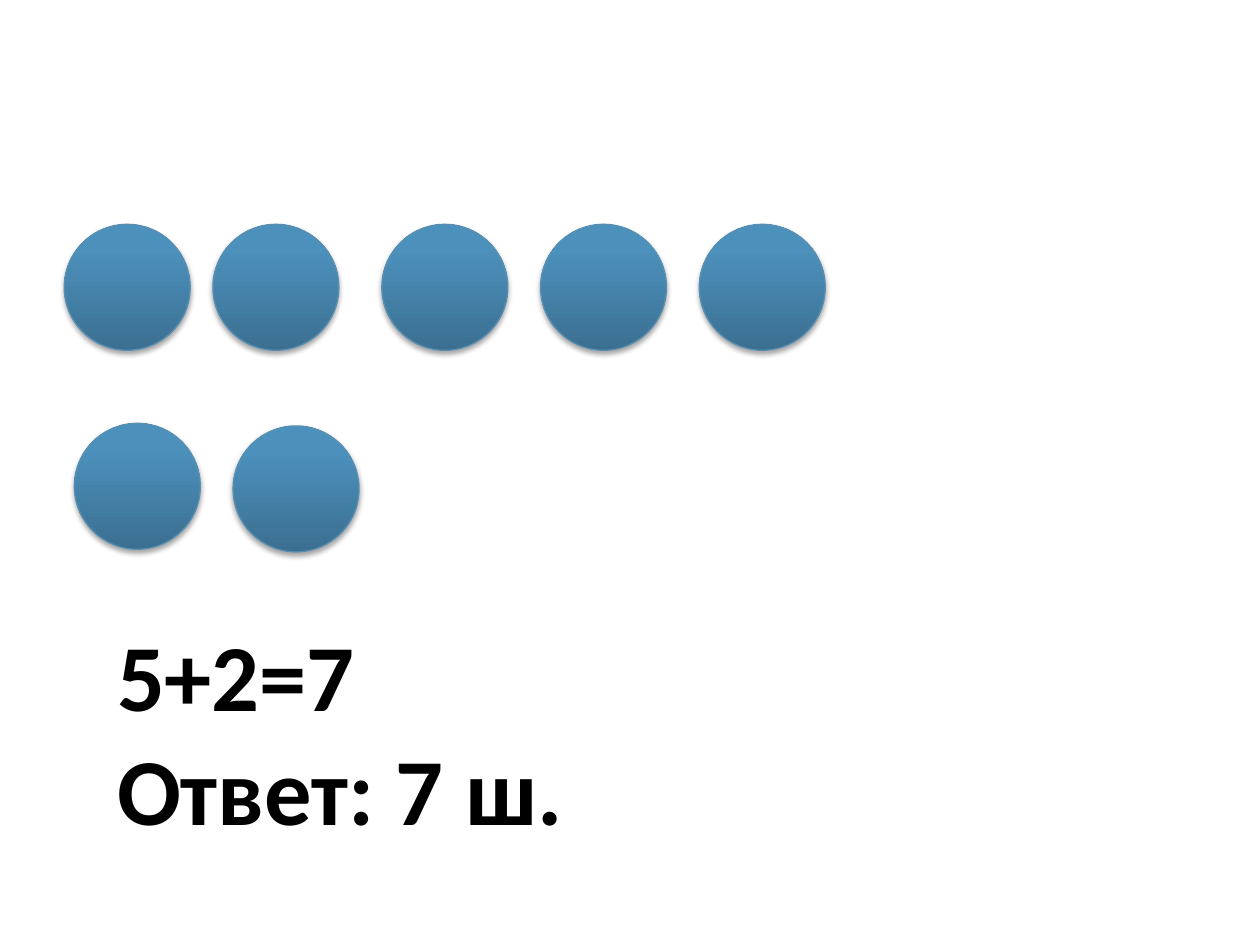
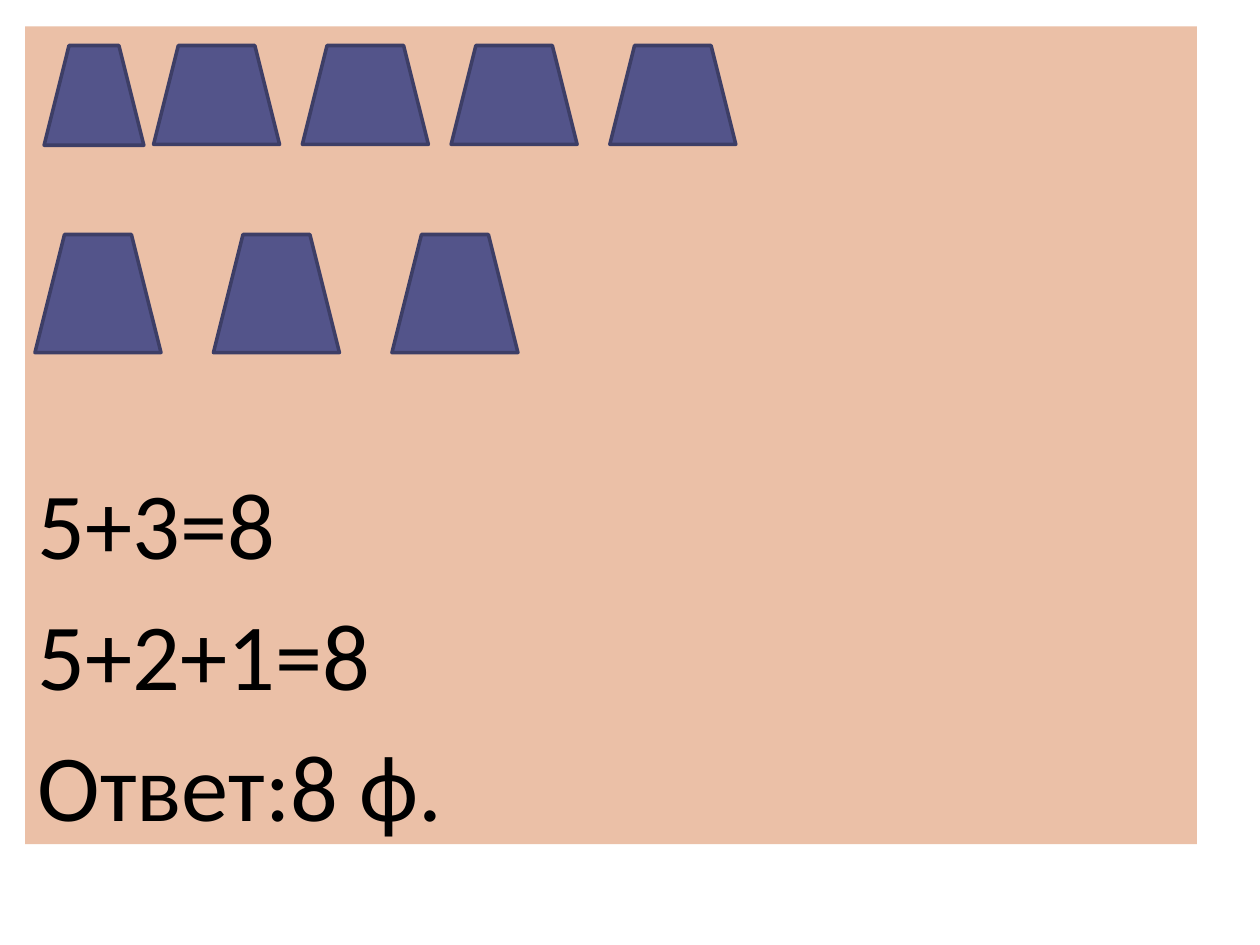
from copy import deepcopy

from lxml.etree import SubElement
from pptx import Presentation
from pptx.dml.color import RGBColor
from pptx.enum.shapes import MSO_SHAPE
from pptx.enum.text import MSO_ANCHOR
from pptx.oxml.ns import qn
from pptx.util import Pt

BLACK = RGBColor(0x00, 0x00, 0x00)
PEACH = RGBColor(0xEB, 0xC0, 0xA7)
VIOLET = RGBColor(0x53, 0x54, 0x8A)
INDIGO = RGBColor(0x3D, 0x3E, 0x66)
RIM = RGBColor(0x58, 0x8F, 0xB3)
BLUES = (
    (0, RGBColor(0x3B, 0x6F, 0x91)),
    (0.8, RGBColor(0x4C, 0x90, 0xBC)),
    (1, RGBColor(0x4A, 0x91, 0xBF)),
)


class Deck:
    font = "Calibri"
    size = 54

    def __init__(self):
        self.prs = Presentation()
        self.prs.slide_width = Pt(720)
        self.prs.slide_height = Pt(540)
        self.slide = None

    def page(self):
        self.slide = self.prs.slides.add_slide(self.prs.slide_layouts[6])

    def shape(self, kind, box, fill=None, line=None, width=0):
        item = self.slide.shapes.add_shape(kind, *map(Pt, box))
        item.shadow.inherit = False
        if fill is not None:
            item.fill.solid()
            item.fill.fore_color.rgb = fill
        if line is None:
            item.line.fill.background()
        else:
            item.line.color.rgb = line
            item.line.width = Pt(width)
        return item

    def ball(self, left, top):
        item = self.shape(MSO_SHAPE.OVAL, (left, top, 72, 72), line=RIM, width=0.75)
        self.shade(item)
        self.shadow(item)

    def shade(self, item):
        item.fill.gradient()
        item.fill.gradient_angle = 90
        stops = item.element.spPr.find(".//" + qn("a:gsLst"))
        stops.append(deepcopy(stops[0]))
        for stop, (place, color) in zip(item.fill.gradient_stops, BLUES):
            stop.position = place
            stop.color.rgb = color

    def shadow(self, item):
        effects = item.element.spPr.find(qn("a:effectLst"))
        outer = SubElement(
            effects, qn("a:outerShdw"), blurRad=str(Pt(3.1)),
            dist=str(Pt(1.8)), dir="5400000", rotWithShape="0")
        color = SubElement(outer, qn("a:srgbClr"), val=str(BLACK))
        SubElement(color, qn("a:alpha"), val="35000")

    def bucket(self, *box):
        self.shape(MSO_SHAPE.TRAPEZOID, box, VIOLET, INDIGO, 2)

    def text(self, box, lines, bold=False, gap=0):
        frame = self.slide.shapes.add_textbox(*map(Pt, box)).text_frame
        frame.word_wrap = True
        frame.vertical_anchor = MSO_ANCHOR.TOP
        for count, line in enumerate(lines):
            para = frame.add_paragraph() if count else frame.paragraphs[0]
            para.space_before = Pt(gap if count else 0)
            run = para.add_run()
            run.text = line
            run.font.name = self.font
            run.font.size = Pt(self.size)
            run.font.bold = bold
            run.font.color.rgb = BLACK


def balls(deck):
    deck.page()
    for left in (36.7, 121.7, 218.2, 308.9, 399.6):
        deck.ball(left, 128.2)
    deck.ball(42.5, 241.9)
    deck.ball(133.2, 243.4)
    deck.text((59.8, 349.2, 516, 138), ("5+2=7", "Ответ: 7 ш."), bold=True)


def buckets(deck):
    deck.page()
    deck.shape(MSO_SHAPE.RECTANGLE, (14.4, 15.1, 669.6, 467.3), PEACH)
    deck.bucket(25.2, 26, 57, 57)
    for left in (87.8, 172.8, 257.8, 348.5):
        deck.bucket(left, 26, 72, 56.5)
    for step in range(3):
        deck.bucket(20 + 102 * step, 134, 72, 67.5)
    deck.text((14.4, 262, 669.6, 226), ("5+3=8", "5+2+1=8", "Ответ:8 ф."), gap=10)


def main():
    deck = Deck()
    balls(deck)
    buckets(deck)
    deck.prs.save("out.pptx")


if __name__ == "__main__":
    main()
